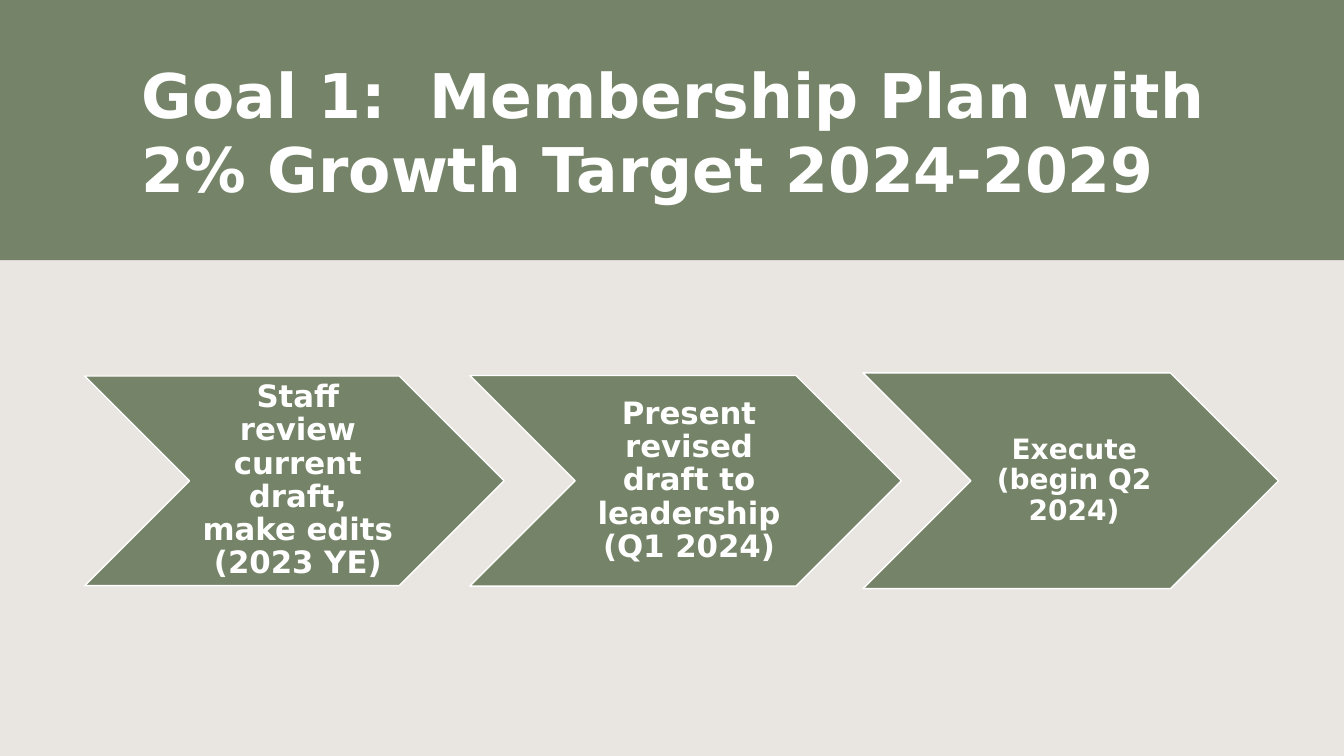
from pptx import Presentation
from pptx.dml.color import RGBColor
from pptx.enum.shapes import MSO_SHAPE
from pptx.enum.text import MSO_ANCHOR, PP_ALIGN
from pptx.util import Inches, Pt

WIDTH, HEIGHT = 13.33, 7.5
GREEN, WHITE, SAND = "758468", "FFFFFF", "E9E5E1"
BANNER_HEIGHT = 2.58
STEPS_MIDDLE = 4.77
STEPS = [
    ("Staff review current draft, make edits (2023 YE)", 0.84, 4.16, 2.08, 22),
    ("Present revised draft to leadership (Q1 2024)", 4.66, 4.28, 2.09, 22),
    ("Execute (begin Q2 2024)", 8.56, 4.12, 2.14, 20),
]


def paint(fill, color):
    """Give a fill one solid colour."""
    fill.solid()
    fill.fore_color.rgb = RGBColor.from_string(color)


def set_all(target, values):
    """Set attributes from a dict of format values."""
    for name, value in values.items():
        setattr(target, name, value)


def add_green(slide, kind, box):
    """Add a flat green shape in a box given in inches."""
    shape = slide.shapes.add_shape(kind, *map(Inches, box))
    shape.shadow.inherit = False
    paint(shape.fill, GREEN)
    return shape


def write(frame, text, size, frame_format, paragraph_format):
    """Write bold white text into a frame."""
    set_all(frame, {"word_wrap": True, "vertical_anchor": MSO_ANCHOR.MIDDLE, **frame_format})
    paragraph = frame.paragraphs[0]
    set_all(paragraph, paragraph_format)
    run = paragraph.add_run()
    run.text = text
    set_all(run.font, {"name": "DejaVu Sans", "size": Pt(size), "bold": True})
    run.font.color.rgb = RGBColor.from_string(WHITE)


def add_banner(slide, box):
    """Draw the title banner with its heading."""
    left, top, width, height = box
    banner = add_green(slide, MSO_SHAPE.RECTANGLE, box)
    banner.line.fill.background()
    heading = slide.shapes.add_textbox(
        Inches(left + 1.31), Inches(top + 0.42), Inches(width * 0.82), Inches(height * 0.68))
    write(heading.text_frame, "Goal 1:  Membership Plan with 2% Growth Target 2024-2029",
          44, {}, {"alignment": PP_ALIGN.LEFT})


def add_step(slide, box, text, size):
    """Draw one chevron of the plan with its label."""
    chevron = add_green(slide, MSO_SHAPE.CHEVRON, box)
    paint(chevron.line.fill, WHITE)
    chevron.line.width = Pt(1)
    insets = {"margin_left": Inches(0.1), "margin_right": Inches(0.03),
              "margin_top": Inches(0.03), "margin_bottom": Inches(0.03)}
    write(chevron.text_frame, text, size, insets,
          {"alignment": PP_ALIGN.CENTER, "line_spacing": 0.9})


def main():
    """Build the slide and save it."""
    deck = Presentation()
    set_all(deck, {"slide_width": Inches(WIDTH), "slide_height": Inches(HEIGHT)})
    slide = deck.slides.add_slide(deck.slide_layouts[6])
    paint(slide.background.fill, SAND)
    add_banner(slide, (0, 0, WIDTH, BANNER_HEIGHT))
    for text, left, width, height, size in STEPS:
        add_step(slide, (left, STEPS_MIDDLE - height / 2, width, height), text, size)
    deck.save("out.pptx")


if __name__ == "__main__":
    main()
